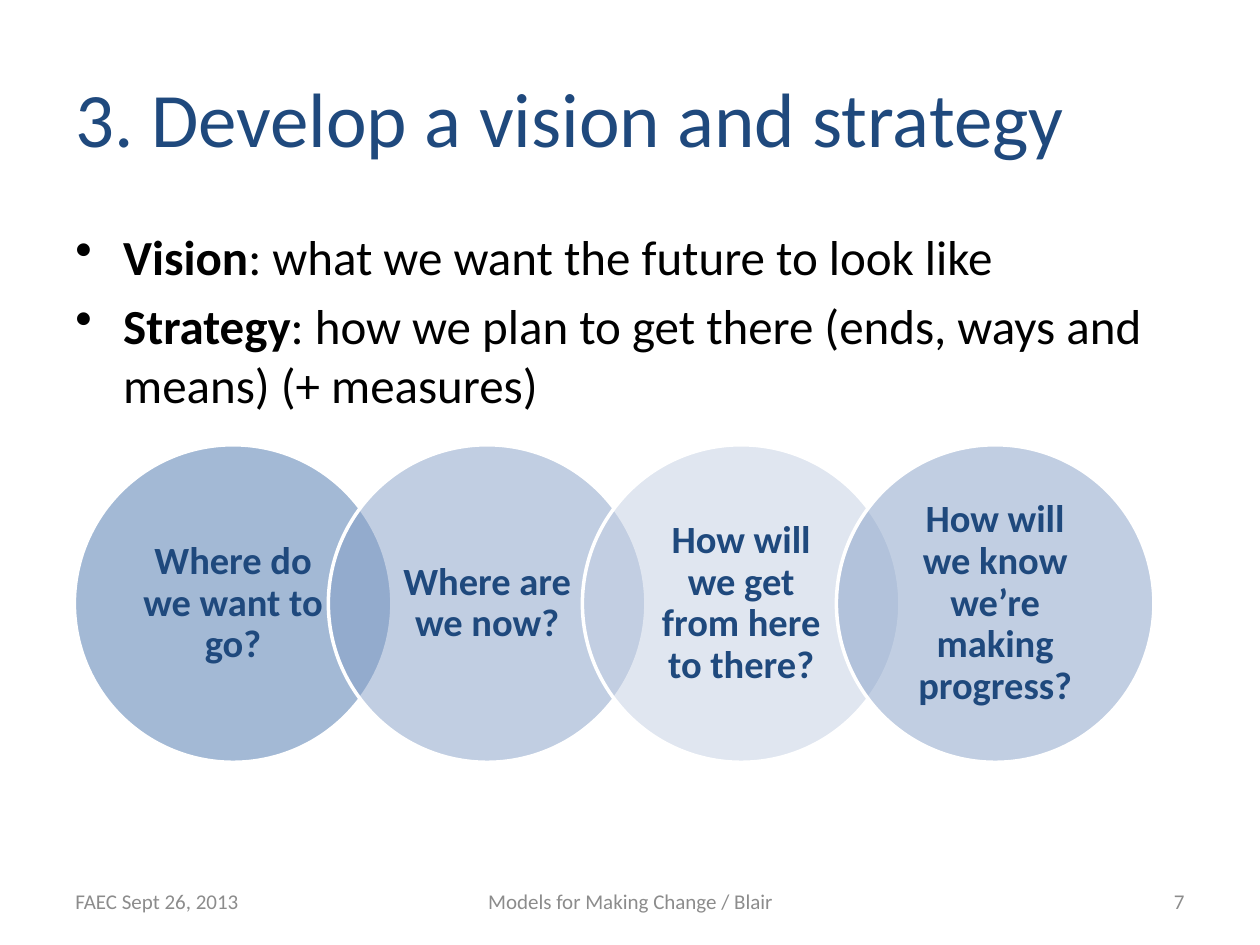
import dataclasses

import lxml.etree
import pptx
import pptx.dml.color
import pptx.enum.shapes
import pptx.enum.text
import pptx.oxml.ns
import pptx.util
from pptx.util import Inches

ALIGN = pptx.enum.text.PP_ALIGN
ANCHOR = pptx.enum.text.MSO_ANCHOR


@dataclasses.dataclass(frozen=True)
class Theme:
    font: str = "Calibri"
    navy: str = "1F497D"
    black: str = "000000"
    grey: str = "8C8C8C"
    white: str = "FFFFFF"
    dark_blue: str = "4875AC"
    mid_blue: str = "859FC7"
    pale_blue: str = "C3CEE2"
    title_size: int = 44
    body_size: int = 28
    circle_size: int = 22
    footer_size: int = 12


theme = Theme()


def rgb(value):
    return pptx.dml.color.RGBColor.from_string(value)


def add_text(left, top, width, height, runs, size, color, align=ALIGN.LEFT, anchor=ANCHOR.MIDDLE):
    """Add a text box; runs holds one list of (text, bold) pairs per paragraph."""
    box = slide.shapes.add_textbox(Inches(left), Inches(top), Inches(width), Inches(height))
    frame = box.text_frame
    frame.word_wrap = True
    frame.vertical_anchor = anchor
    for index, pairs in enumerate(runs):
        paragraph = frame.add_paragraph() if index else frame.paragraphs[0]
        paragraph.alignment = align
        paragraph.font.name = theme.font
        paragraph.font.size = pptx.util.Pt(size)
        paragraph.font.color.rgb = rgb(color)
        for text, bold in pairs:
            run = paragraph.add_run()
            run.text = text
            run.font.bold = bold
    return frame


presentation = pptx.Presentation()
presentation.slide_width = Inches(10)
presentation.slide_height = Inches(7.5)
slide = presentation.slides.add_slide(presentation.slide_layouts[6])

# Title
add_text(0.5, 0.3, 9, 1.25, [[("3. Develop a vision and strategy", False)]],
         theme.title_size, theme.navy)

# Bulleted definitions
definitions = [
    [("Vision", True), (": what we want the future to look like", False)],
    [("Strategy", True), (": how we plan to get there (ends, ways and means) (+ measures)", False)],
]
body = add_text(0.5, 1.75, 9, 4.95, definitions, theme.body_size, theme.black, anchor=ANCHOR.TOP)
for paragraph in body.paragraphs:
    paragraph.space_before = pptx.util.Pt(0.2 * theme.body_size)
    properties = paragraph._p.get_or_add_pPr()
    properties.set("marL", str(Inches(0.38)))
    properties.set("indent", str(-Inches(0.38)))
    bullet = pptx.oxml.ns.qn("a:buChar")
    properties.insert_element_before(
        lxml.etree.Element(bullet, char="•"), "a:tabLst", "a:defRPr", "a:extLst")

# Overlapping circles, each covering a fifth of the one before
circles = [
    ("Where do we want to go?", theme.dark_blue),
    ("Where are we now?", theme.mid_blue),
    ("How will we get from here to there?", theme.pale_blue),
    ("How will we know we’re making progress?", theme.mid_blue),
]
diameter, circle_left, circle_top, text_inset = 2.52, 0.59, 3.53, 0.37
for index, (question, color) in enumerate(circles):
    left = circle_left + index * 0.8 * diameter
    circle = slide.shapes.add_shape(
        pptx.enum.shapes.MSO_SHAPE.OVAL,
        Inches(left), Inches(circle_top), Inches(diameter), Inches(diameter))
    circle.shadow.inherit = False
    circle.fill.solid()
    circle.fill.fore_color.rgb = rgb(color)
    fill_color = circle._element.spPr.find(".//" + pptx.oxml.ns.qn("a:srgbClr"))
    lxml.etree.SubElement(fill_color, pptx.oxml.ns.qn("a:alpha"), val="50000")
    circle.line.color.rgb = rgb(theme.white)
    circle.line.width = pptx.util.Pt(2)

    text_side = diameter - 2 * text_inset
    label = add_text(left + text_inset, circle_top + text_inset, text_side, text_side,
                     [[(question, True)]], theme.circle_size, theme.navy, ALIGN.CENTER)
    label.margin_left = label.margin_right = Inches(0.14)
    label.margin_top = label.margin_bottom = Inches(0.03)
    label.paragraphs[0].line_spacing = 0.9

# Footer: date, talk and slide number
footers = [
    (0.5, 2.33, "FAEC Sept 26, 2013", ALIGN.LEFT),
    (3.42, 3.17, "Models for Making Change / Blair", ALIGN.CENTER),
    (7.17, 2.33, "7", ALIGN.RIGHT),
]
for left, width, text, align in footers:
    add_text(left, 6.95, width, 0.4, [[(text, False)]], theme.footer_size, theme.grey, align)

presentation.save("out.pptx")
